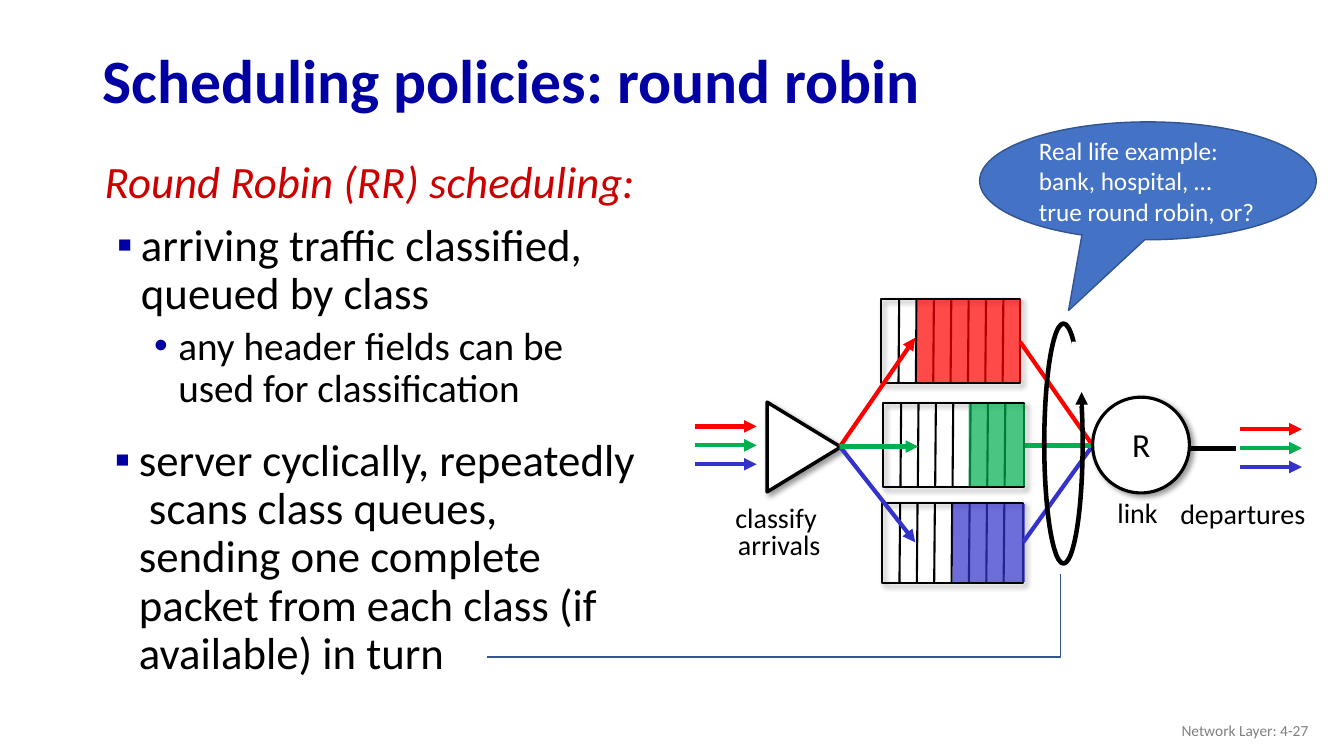
import pptx
import pptx.util
import pptx.dml.color
import pptx.enum.shapes
import pptx.enum.text
import pptx.oxml
import pptx.oxml.ns

Pt = pptx.util.Pt
rgb = pptx.dml.color.RGBColor.from_string
KIND = pptx.enum.shapes.MSO_SHAPE
ALIGN = pptx.enum.text.PP_ALIGN
ANCHOR = pptx.enum.text.MSO_ANCHOR
NS = pptx.oxml.ns.nsdecls("a")
RED, GREEN, BLUE = "FF0000", "00B050", "3333CC"
NAVY, BLACK, WHITE = "0000A3", "000000", "FFFFFF"

deck = pptx.Presentation()
deck.slide_width, deck.slide_height = Pt(960), Pt(540)
slide = deck.slides.add_slide(deck.slide_layouts[6])
parts = slide.shapes


def line(x1, y1, x2, y2, color=BLACK, wide=3, head=False):
    link = parts.add_connector(pptx.enum.shapes.MSO_CONNECTOR.STRAIGHT,
                               Pt(x1), Pt(y1), Pt(x2), Pt(y2))
    link.line.color.rgb = rgb(color)
    link.line.width = Pt(wide)
    if head:
        link.line._get_or_add_ln().append(
            pptx.oxml.parse_xml(f'<a:tailEnd {NS} type="triangle"/>'))
    link._element.spPr.append(pptx.oxml.parse_xml(f"<a:effectLst {NS}/>"))


def shape(kind, x, y, w, h, fill=None, edge=None, wide=1, shade=False):
    part = parts.add_shape(kind, Pt(x), Pt(y), Pt(w), Pt(h))
    part.shadow.inherit = False
    if fill:
        part.fill.solid()
        part.fill.fore_color.rgb = rgb(fill)
    else:
        part.fill.background()
    if edge:
        part.line.color.rgb = rgb(edge)
        part.line.width = Pt(wide)
    else:
        part.line.fill.background()
    if shade:
        glow = part._element.spPr.find(pptx.oxml.ns.qn("a:effectLst"))
        glow.append(pptx.oxml.parse_xml(
            f'<a:outerShdw {NS} blurRad="50800" dist="38100" dir="2700000" algn="tl" '
            'rotWithShape="0"><a:srgbClr val="000000"><a:alpha val="40000"/>'
            '</a:srgbClr></a:outerShdw>'))
    return part


# Link out of the server
line(846.7, 320.4, 882.7, 320.4)

# Class queues: frame, slot dividers, waiting packets
for x, y, w, h, color, start, span in [
        (629.3, 213.8, 99.4, 59.8, RED, 655.2, 74.2),
        (630.7, 288, 100.8, 59.8, GREEN, 691.9, 40.3),
        (630, 359.3, 100.8, 56.9, BLUE, 680.4, 51.8)]:
    shape(KIND.RECTANGLE, x, y, w, h, None, BLACK, 1.5, True)
    for slot in range(7):
        left = x + 13 + 12.4 * slot
        line(left, y + 0.5, left - 0.5, y + h, BLACK, 1.5)
    load = shape(KIND.RECTANGLE, start, y + 0.6, span, h - 1.2, color)
    tint = load._element.spPr.find(".//" + pptx.oxml.ns.qn("a:srgbClr"))
    tint.append(pptx.oxml.parse_xml(f'<a:alpha {NS} val="71000"/>'))

# Classifier
sorter = shape(KIND.ISOSCELES_TRIANGLE, 542.2, 293, 64.1, 52.6, WHITE, BLACK, 2.5, True)
sorter.rotation = 90

# Arrivals and departures
for x, y in [(496.2, 304.6), (885.6, 306.6)]:
    for i, color in enumerate([RED, GREEN, BLUE]):
        line(x, y + 13.5 * i, x + 44.3, y + 13.5 * i, color, head=True)

# Routes into and out of the queues
for color, tip, top, exit, low in [
        (RED, 653.8, 241.2, 728.6, 244.1),
        (BLUE, 653.8, 387.4, 730.8, 387.4),
        (GREEN, 655.9, 319, 732.2, 318.2)]:
    line(600, 319, tip, top, color, head=True)
    line(exit, low, 780.5, 318.2, color)

# Server and its scanning loop
shape(KIND.OVAL, 780.5, 283.7, 69.1, 68.4, WHITE, BLACK, 2.25, True)
shape(KIND.OVAL, 745.9, 231.1, 27.4, 171.4, None, BLACK, 3.25)
shape(KIND.RECTANGLE, 765.4, 244.1, 15.1, 46.1, WHITE)
line(772.6, 301, 772.6, 280.1, head=True)

# Leader from the text to the loop
trail = parts.build_freeform(Pt(347.8), Pt(469.4), 1.0)
trail.add_line_segments([(Pt(757.4), Pt(469.4)), (Pt(757.4), Pt(409.7))], close=False)
leader = trail.convert_to_shape()
leader.shadow.inherit = False
leader.fill.background()
leader.line.color.rgb = rgb("325491")
leader.line.width = Pt(1)

# Speech bubble
bubble = shape(KIND.OVAL_CALLOUT, 699.8, 87.1, 240.5, 84.2, "4472C4", "325491")
bubble.adjustments[0], bubble.adjustments[1] = -0.236, 1.101

# Texts: place, anchor, align, line spacing, wrap, size, colour, then
# paragraphs of text, left margin, space before, bullet
TOP, MID = ANCHOR.TOP, ANCHOR.MIDDLE
LEFT, MIDST, RIGHT = ALIGN.LEFT, ALIGN.CENTER, ALIGN.RIGHT
for place, anchor, align, space, wrap, size, color, paras in [
        ((66.2, 24.5, 828, 70.6), MID, LEFT, 0.9, True, 44, NAVY,
         [("Scheduling policies: round robin", 0, 0, "")]),
        ((56.9, 110.9, 406, 198), TOP, LEFT, 0.9, True, 32, BLACK,
         [("Round Robin (RR) scheduling:", 28.1, 10, ""),
          ("arriving traffic classified, queued by class", 36.7, 10, "▪"),
          ("any header fields can be used for classification", 63.4, 5, "•")]),
        ((55.4, 308.9, 406, 185), TOP, LEFT, 0.9, True, 32, BLACK,
         [("server cyclically, repeatedly  scans class queues, sending one complete "
           "packet from each class (if available) in turn", 36.7, 10, "▪")]),
        ((517.7, 358.6, 77.8, 46.8), TOP, MIDST, 0.8, False, 20, BLACK,
         [("classify ", 0, 0, ""), ("arrivals", 0, 0, "")]),
        ((835.2, 355.7, 105.1, 27.4), TOP, MIDST, 0.8, False, 20, BLACK,
         [("departures", 0, 0, "")]),
        ((790.6, 355, 43.9, 27.4), TOP, MIDST, 0.8, False, 20, BLACK,
         [("link", 0, 0, "")]),
        ((801.4, 304.6, 27.4, 31), TOP, MIDST, 0.8, False, 24, BLACK,
         [("R", 0, 0, "")]),
        ((725.8, 507.6, 216, 28.8), MID, RIGHT, 1.0, True, 11, "808080",
         [("Network Layer: 4-27", 0, 0, "")]),
        (None, MID, LEFT, 1.0, True, 18, WHITE,
         [("Real life example:", 0, 0, ""), ("bank, hospital, …", 0, 0, ""),
          ("true round robin, or?", 0, 0, "")])]:
    box = parts.add_textbox(*map(Pt, place)) if place else bubble
    frame = box.text_frame
    frame.word_wrap = wrap
    frame.vertical_anchor = anchor
    for i, (text, left, before, mark) in enumerate(paras):
        para = frame.add_paragraph() if i else frame.paragraphs[0]
        para.alignment = align
        para.line_spacing = space
        para.space_before = Pt(before)
        props = para._p.get_or_add_pPr()
        if left:
            props.set("marL", str(Pt(left)))
            props.set("indent", str(Pt(-17.3)))
        if mark:
            for tag in [f'<a:buClr {NS}><a:srgbClr val="{NAVY}"/></a:buClr>',
                        f'<a:buFont {NS} typeface="Arial"/>',
                        f'<a:buChar {NS} char="{mark}"/>']:
                props.append(pptx.oxml.parse_xml(tag))
        run = para.add_run()
        run.text = text
        font = run.font
        font.name = "Calibri"
        font.size = Pt(28 if mark == "•" else size)
        font.bold = size == 44
        font.italic = text.startswith("Round")
        font.color.rgb = rgb("CC0000" if font.italic else color)

deck.save("out.pptx")
